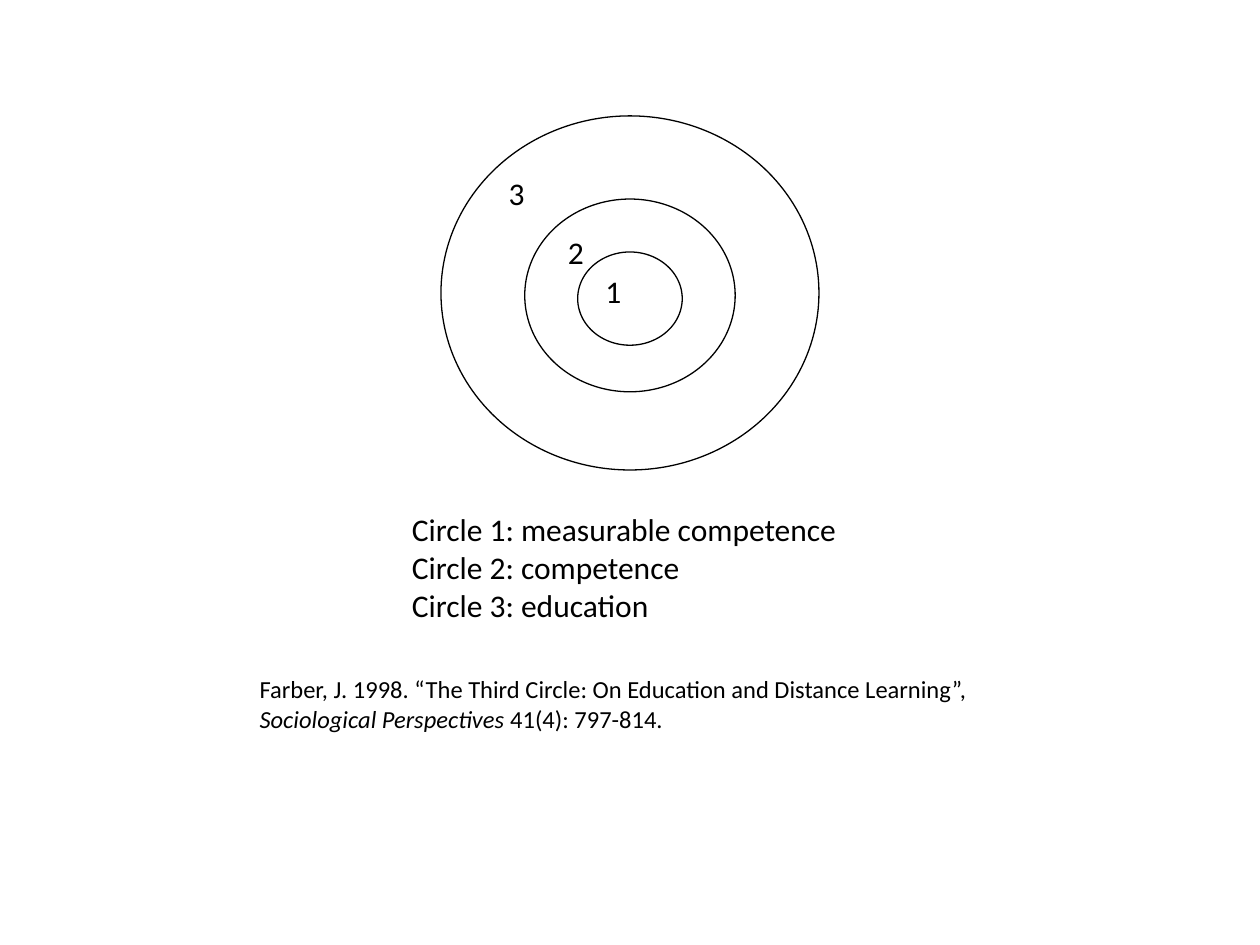
from pptx import Presentation
from pptx.dml.color import RGBColor
from pptx.enum.shapes import MSO_SHAPE
from pptx.enum.text import MSO_ANCHOR, MSO_AUTO_SIZE, PP_ALIGN
from pptx.util import Inches, Pt

BLACK = RGBColor(0, 0, 0)
WHITE = RGBColor(255, 255, 255)


class Sheet:
    """Holds the text style and the slide being drawn."""

    def __init__(self, slide, font="Calibri", color=BLACK):
        self.slide = slide
        self.font = font
        self.color = color

    def style(self, frame, size):
        for para in frame.paragraphs:
            para.alignment = PP_ALIGN.LEFT
            para.font.name = self.font
            para.font.size = Pt(size)
            para.font.color.rgb = self.color

    def title(self, box, parts, size):
        shape = self.slide.shapes.title
        shape.left, shape.top, shape.width, shape.height = map(Inches, box)
        frame = shape.text_frame
        frame.auto_size = MSO_AUTO_SIZE.NONE
        frame.vertical_anchor = MSO_ANCHOR.BOTTOM
        for text, slant in parts:
            run = frame.paragraphs[0].add_run()
            run.text = text
            run.font.italic = slant
        self.style(frame, size)

    def ring(self, label, mid, top, width, height, size=18):
        box = map(Inches, (mid - width / 2, top, width, height))
        shape = self.slide.shapes.add_shape(MSO_SHAPE.OVAL, *box)
        shape.shadow.inherit = False
        shape.fill.solid()
        shape.fill.fore_color.rgb = WHITE
        shape.line.color.rgb = self.color
        shape.line.width = Pt(0.75)
        frame = shape.text_frame
        frame.text = label
        frame.vertical_anchor = MSO_ANCHOR.TOP
        self.style(frame, size)

    def legend(self, box, lines, size=18):
        frame = self.slide.shapes.add_textbox(*map(Inches, box)).text_frame
        frame.word_wrap = False
        frame.auto_size = MSO_AUTO_SIZE.SHAPE_TO_FIT_TEXT
        frame.text = "\n".join(lines)
        self.style(frame, size)


def main():
    deck = Presentation()
    deck.slide_width, deck.slide_height = Inches(10), Inches(7.5)
    sheet = Sheet(deck.slides.add_slide(deck.slide_layouts[5]))

    sheet.title((1.96, 5.25, 6, 0.62), [
        ("Farber, J. 1998. “The Third Circle: On Education and Distance Learning”, ", False),
        ("Sociological Perspectives", True),
        (" 41(4): 797-814.", False),
    ], 14)

    rings = [("3", 0.92, 3, 2.81), ("2", 1.58, 1.67, 1.53), ("1", 2, 0.83, 0.74)]
    for label, top, width, height in rings:
        sheet.ring(label, 5, top, width, height)

    names = ["measurable competence", "competence", "education"]
    lines = [f"Circle {rank}: {name}" for rank, name in enumerate(names, 1)]
    sheet.legend((3.17, 4, 3.61, 1.01), lines)

    deck.save("out.pptx")


if __name__ == "__main__":
    main()
